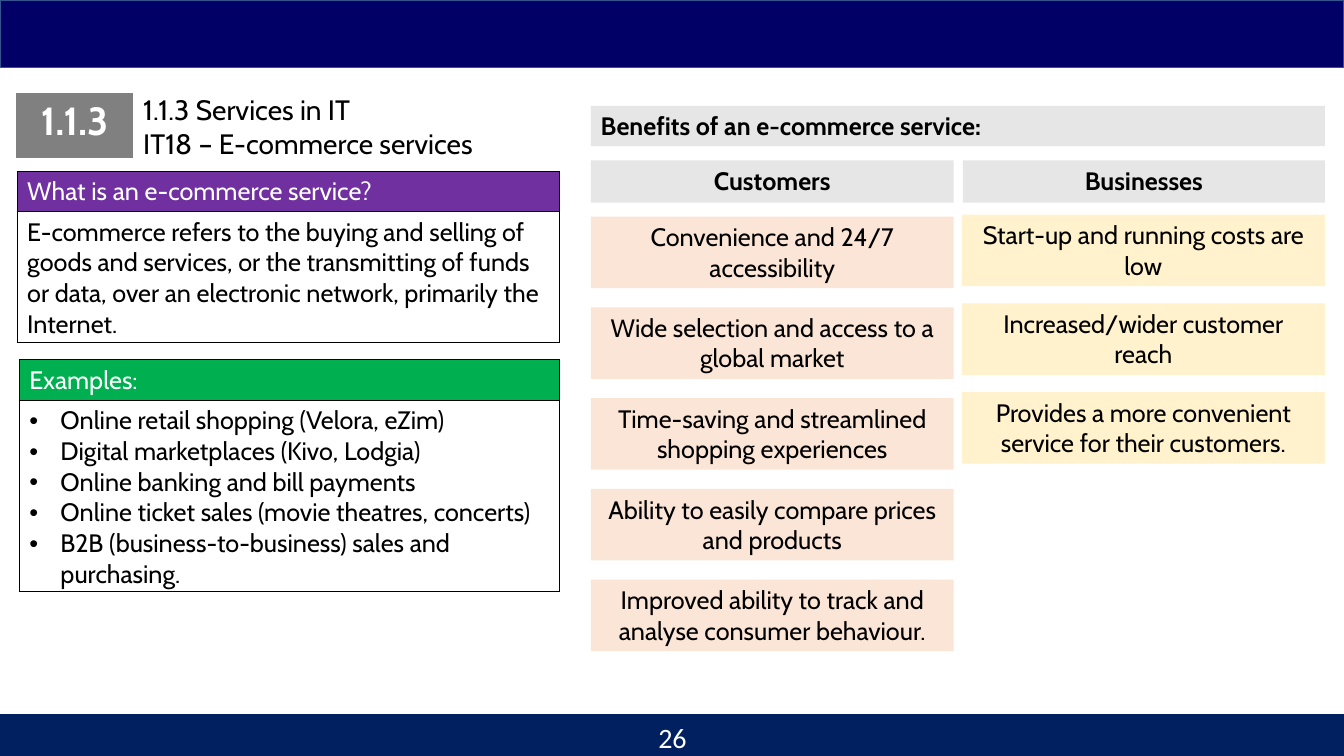
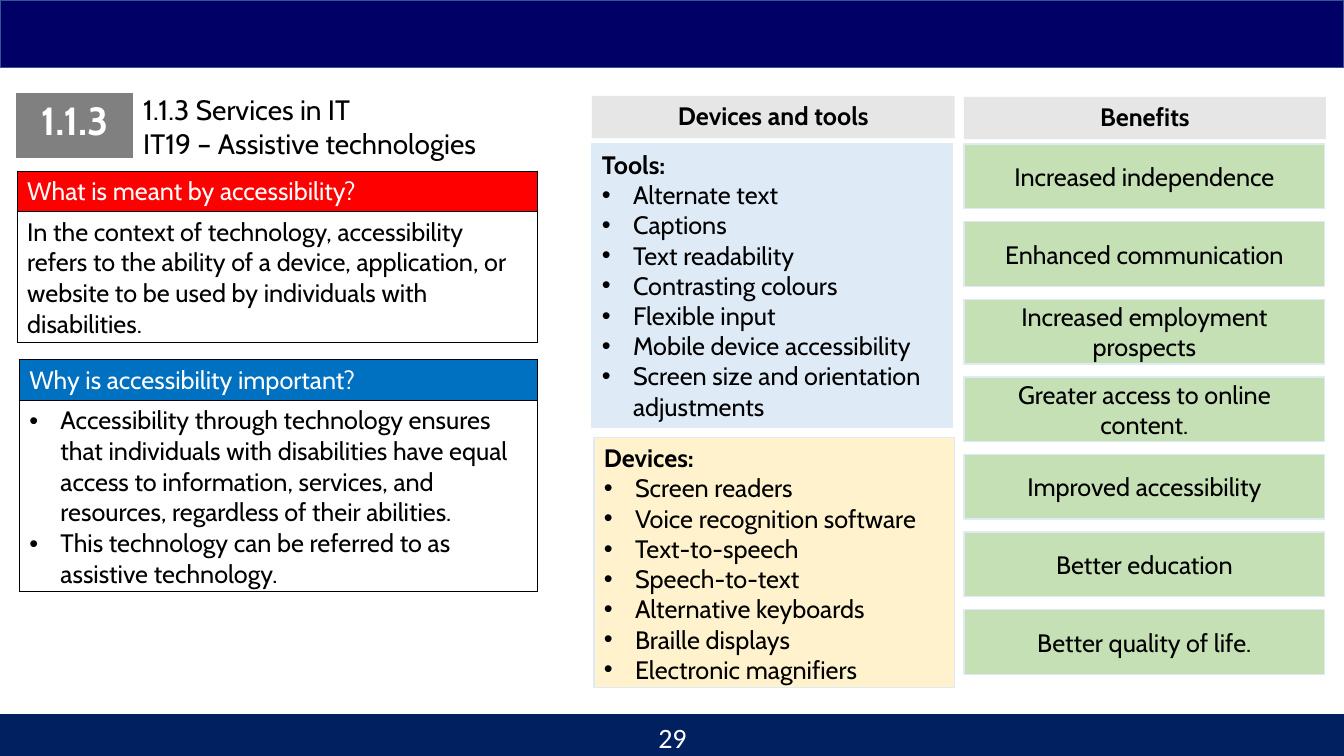
from dataclasses import dataclass

from lxml.etree import SubElement
from pptx import Presentation
from pptx.dml.color import RGBColor
from pptx.enum.shapes import MSO_SHAPE as Shape
from pptx.enum.text import MSO_ANCHOR as Anchor, MSO_AUTO_SIZE as AutoSize, PP_ALIGN as Align
from pptx.oxml.ns import qn
from pptx.util import Pt

EMU_PER_PX = 9144  # 100 px to the inch
SLIDE_WIDTH, SLIDE_HEIGHT = 1333, 750


@dataclass(frozen=True)
class Theme:
    font: str = "Cabin"
    number_font: str = "Calibri"
    body_size: int = 18
    title_size: int = 20
    badge_size: int = 28
    black: str = "000000"
    white: str = "FFFFFF"
    band: str = "000066"
    band_line: str = "325491"
    footer: str = "002060"
    badge: str = "808080"
    heading: str = "E7E6E6"
    purple: str = "7030A0"
    green: str = "00B050"
    red: str = "FF0000"
    blue: str = "0070C0"
    peach: str = "FBE5D6"
    cream: str = "FFF2CC"
    pale_blue: str = "DEEBF7"
    pale_green: str = "C5E0B4"


THEME = Theme()


def px(*lengths):
    return [length * EMU_PER_PX for length in lengths]


def rgb(color):
    return RGBColor.from_string(color)


# Text

def add_bullet(paragraph):
    properties = paragraph._p.get_or_add_pPr()
    indent, = px(31)
    properties.set("marL", str(indent))
    properties.set("indent", str(-indent))
    SubElement(properties, qn("a:buFont")).set("typeface", "Arial")
    SubElement(properties, qn("a:buChar")).set("char", "•")


def format_paragraph(paragraph, size=THEME.body_size, color=THEME.black,
                     bold=False, align=Align.LEFT, font=THEME.font):
    paragraph.alignment = align
    for run in paragraph.runs:
        run.font.name = font
        run.font.size = Pt(size)
        run.font.bold = bold
        run.font.color.rgb = rgb(color)


def write(text_frame, text, **style):
    text_frame.word_wrap = True
    text_frame.text = text
    for paragraph in text_frame.paragraphs:
        format_paragraph(paragraph, **style)


# Shapes

def add_box(slide, box, fill, text="", line=None, anchor=Anchor.TOP, **style):
    shape = slide.shapes.add_shape(Shape.RECTANGLE, *px(*box))
    shape.shadow.inherit = False
    shape.fill.solid()
    shape.fill.fore_color.rgb = rgb(fill)
    if line:
        shape.line.color.rgb = rgb(line)
        shape.line.width = Pt(1)
    else:
        shape.line.fill.background()
    if text:
        shape.text_frame.vertical_anchor = anchor
        write(shape.text_frame, text, **style)
    return shape


def add_heading(slide, box, text, align=Align.CENTER):
    add_box(slide, box, THEME.heading, text, bold=True, align=align)


def add_cards(slide, box, pitch, fill, texts, **options):
    left, top, width, height = box
    for index, text in enumerate(texts):
        add_box(slide, (left, top + index * pitch, width, height), fill, text,
                align=Align.CENTER, **options)


def add_list_box(slide, box, fill, heading, items):
    shape = add_box(slide, box, fill, "\n".join([heading, *items]), line=THEME.pale_blue)
    first, *rest = shape.text_frame.paragraphs
    format_paragraph(first, bold=True)
    for paragraph in rest:
        add_bullet(paragraph)


# Tables

def style_cell(cell, fill=None, border=THEME.black, widths=(1, 1, 1, 1)):
    properties = cell._tc.get_or_add_tcPr()
    for side, width in zip("LRTB", widths):
        line = SubElement(properties, qn(f"a:ln{side}"), w=str(Pt(width)))
        SubElement(SubElement(line, qn("a:solidFill")), qn("a:srgbClr"), val=border)
    if fill:
        cell.fill.solid()
        cell.fill.fore_color.rgb = rgb(fill)
    else:
        cell.fill.background()


def add_table(slide, left, top, widths, heights):
    table = slide.shapes.add_table(
        len(heights), len(widths), *px(left, top, sum(widths), sum(heights))).table
    table.first_row = table.horz_banding = False
    for column, width in zip(table.columns, px(*widths)):
        column.width = width
    for row, height in zip(table.rows, px(*heights)):
        row.height = height
    return table


def add_panel(slide, left, top, width, body_height, fill, heading, lines, bullets=False):
    table = add_table(slide, left, top, [width], [40, body_height])
    head, body = table.cell(0, 0), table.cell(1, 0)
    style_cell(head, fill)
    write(head.text_frame, heading, color=THEME.white)
    style_cell(body)
    write(body.text_frame, "\n".join(lines))
    if bullets:
        for paragraph in body.text_frame.paragraphs:
            add_bullet(paragraph)


# Parts shared by the slides

def add_title(slide, text):
    title = slide.shapes.title
    title.left, title.top, title.width, title.height = px(132, 87, 603, 77)
    title.text_frame.auto_size = AutoSize.NONE
    title.text_frame.vertical_anchor = Anchor.TOP
    write(title.text_frame, text, size=THEME.title_size)


def add_badge(slide, text):
    cell = add_table(slide, 15, 92, [118], [67]).cell(0, 0)
    style_cell(cell, THEME.badge, THEME.white, widths=(1, 1, 1, 3))
    write(cell.text_frame, text, size=THEME.badge_size, color=THEME.white,
          bold=True, align=Align.CENTER)


def add_footer(slide, number):
    footer = add_table(slide, 0, 709, [444, 445, 444], [41])
    for cell in footer.iter_cells():
        style_cell(cell, THEME.footer, THEME.footer)
    number_box = slide.shapes.add_textbox(*px(517, 710, 300, 40))
    write(number_box.text_frame, str(number), size=THEME.title_size, color=THEME.white,
          align=Align.CENTER, font=THEME.number_font)


def add_topic_slide(presentation, section, topic, number):
    slide = presentation.slides.add_slide(presentation.slide_layouts[5])
    add_box(slide, (0, 0, SLIDE_WIDTH, 67), THEME.band, line=THEME.band_line)
    add_title(slide, f"{section} Services in IT\n{topic}")
    add_badge(slide, section)
    add_footer(slide, number)
    return slide


# Slides

def build_commerce_slide(presentation):
    slide = add_topic_slide(presentation, "1.1.3", "IT18 – E-commerce services", 26)
    add_panel(slide, 17, 170, 538, 130, THEME.purple, "What is an e-commerce service?", [
        "E-commerce refers to the buying and selling of goods and services, or the "
        "transmitting of funds or data, over an electronic network, primarily the Internet."])
    add_panel(slide, 19, 357, 536, 190, THEME.green, "Examples:", [
        "Online retail shopping (Velora, eZim)",
        "Digital marketplaces (Kivo, Lodgia)",
        "Online banking and bill payments",
        "Online ticket sales (movie theatres, concerts)",
        "B2B (business-to-business) sales and purchasing.",
    ], bullets=True)

    add_heading(slide, (586, 105, 728, 40), "Benefits of an e-commerce service:", Align.LEFT)
    add_heading(slide, (586, 159, 360, 42), "Customers")
    add_heading(slide, (955, 159, 359, 42), "Businesses")
    add_cards(slide, (586, 215, 360, 71), 90, THEME.peach, [
        "Convenience and 24/7 accessibility",
        "Wide selection and access to a global market",
        "Time-saving and streamlined shopping experiences",
        "Ability to easily compare prices and products",
        "Improved ability to track and analyse consumer behaviour.",
    ])
    add_cards(slide, (954, 213, 360, 71), 88, THEME.cream, [
        "Start-up and running costs are low",
        "Increased/wider customer reach",
        "Provides a more convenient service for their customers.",
    ])


def build_accessibility_slide(presentation):
    slide = add_topic_slide(presentation, "1.1.3", "IT19 – Assistive technologies", 29)
    add_panel(slide, 17, 170, 516, 130, THEME.red, "What is meant by accessibility?", [
        "In the context of technology, accessibility refers to the ability of a device, "
        "application, or website to be used by individuals with disabilities."])
    add_panel(slide, 19, 357, 514, 190, THEME.blue, "Why is accessibility important?", [
        "Accessibility through technology ensures that individuals with disabilities have "
        "equal access to information, services, and resources, regardless of their abilities.",
        "This technology can be referred to as assistive technology.",
    ], bullets=True)

    add_heading(slide, (587, 95, 360, 42), "Devices and tools")
    add_heading(slide, (956, 96, 359, 42), "Benefits")
    add_list_box(slide, (587, 143, 358, 281), THEME.pale_blue, "Tools:", [
        "Alternate text", "Captions", "Text readability", "Contrasting colours",
        "Flexible input", "Mobile device accessibility",
        "Screen size and orientation adjustments",
    ])
    add_list_box(slide, (589, 434, 358, 248), THEME.cream, "Devices:", [
        "Screen readers", "Voice recognition software", "Text-to-speech", "Speech-to-text",
        "Alternative keyboards", "Braille displays", "Electronic magnifiers",
    ])
    add_cards(slide, (956, 143, 358, 64), 77, THEME.pale_green, [
        "Increased independence",
        "Enhanced communication",
        "Increased employment prospects",
        "Greater access to online content.",
        "Improved accessibility",
        "Better education",
        "Better quality of life.",
    ], line=THEME.pale_blue, anchor=Anchor.MIDDLE)


def main():
    presentation = Presentation()
    presentation.slide_width, presentation.slide_height = px(SLIDE_WIDTH, SLIDE_HEIGHT)
    build_commerce_slide(presentation)
    build_accessibility_slide(presentation)
    presentation.save("out.pptx")


if __name__ == "__main__":
    main()
